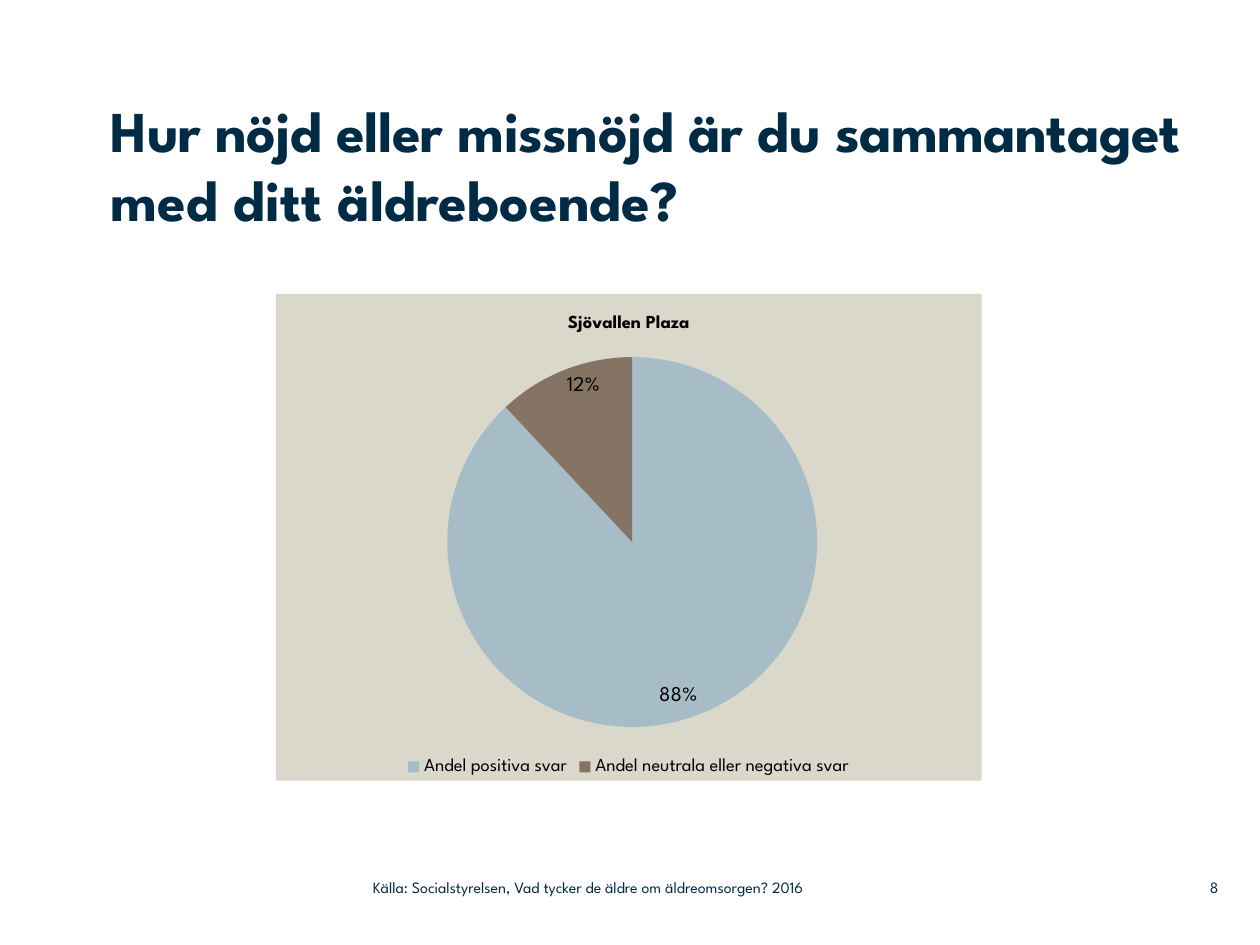
from lxml import etree
from pptx import Presentation
from pptx.chart.data import CategoryChartData
from pptx.dml.color import RGBColor
from pptx.enum.chart import XL_CHART_TYPE, XL_LABEL_POSITION, XL_LEGEND_POSITION
from pptx.enum.text import MSO_ANCHOR, PP_ALIGN
from pptx.oxml import parse_xml
from pptx.oxml.ns import nsdecls
from pptx.util import Inches, Pt

PIE = XL_CHART_TYPE.PIE
INSIDE_END = XL_LABEL_POSITION.INSIDE_END
LEGEND_BOTTOM = XL_LEGEND_POSITION.BOTTOM
TOP, MIDDLE = MSO_ANCHOR.TOP, MSO_ANCHOR.MIDDLE
LEFT, RIGHT = PP_ALIGN.LEFT, PP_ALIGN.RIGHT

WIDTH, HEIGHT = 10, 7.5
FONT = "League Spartan"
NAVY, BLACK, SAND = "002B45", "000000", "DAD7CB"
SLICES = [
    ("Andel positiva svar", 88, "A6BCC6"),
    ("Andel neutrala eller negativa svar", 12, "857363"),
]


def color(value):
    return RGBColor.from_string(value)


def paint(fill, value):
    fill.solid()
    fill.fore_color.rgb = color(value)


def format_font(font, size, value=BLACK, bold=False):
    font.name, font.size, font.bold = FONT, Pt(size), bold
    font.color.rgb = color(value)


def write(paragraph, text, size, value=NAVY, bold=False, align=LEFT, spacing=0):
    """Add a run to the paragraph; spacing is letter spacing in points."""
    paragraph.alignment = align
    run = paragraph.add_run()
    run.text = text
    format_font(run.font, size, value, bold)
    if spacing:
        run.font._element.set("spc", str(round(spacing * 100)))


class SlideBuilder:
    """Places elements by shares of the slide's width and height."""

    def __init__(self, presentation):
        self.slide = presentation.slides.add_slide(presentation.slide_layouts[6])
        paint(self.slide.background.fill, "FFFFFF")

    def box(self, left, top, width, height):
        return (Inches(left * WIDTH), Inches(top * HEIGHT),
                Inches(width * WIDTH), Inches(height * HEIGHT))

    def text(self, place, *runs, anchor=TOP, **style):
        """Add one paragraph made of (text, letter spacing) runs."""
        frame = self.slide.shapes.add_textbox(*self.box(*place)).text_frame
        frame.word_wrap = True
        frame.vertical_anchor = anchor
        frame.margin_left = frame.margin_right = 0
        frame.margin_top = frame.margin_bottom = 0
        for text, spacing in runs:
            write(frame.paragraphs[0], text, spacing=spacing, **style)

    def pie(self, place, title, slices, plot_area):
        data = CategoryChartData(number_format="0")
        data.categories = [name for name, _, _ in slices]
        data.add_series("Series 1", [share for _, share, _ in slices])
        chart = self.slide.shapes.add_chart(PIE, *self.box(*place), data).chart
        format_font(chart.font, 18)

        chart.has_title = True
        write(chart.chart_title.text_frame.paragraphs[0], title, 10.5, BLACK, bold=True)
        chart.chart_title.include_in_layout = False
        chart.has_legend = True
        chart.legend.position = LEGEND_BOTTOM
        chart.legend.include_in_layout = False
        format_font(chart.legend.font, 10.5)

        plot = chart.plots[0]
        plot.vary_by_categories = True
        for index, (_, _, fill) in enumerate(slices):
            paint(plot.series[0].points[index].format.fill, fill)
        plot.has_data_labels = True
        labels = plot.data_labels
        labels.show_percentage, labels.show_value = True, False
        labels.number_format, labels.number_format_is_linked = "0%", False
        labels.position = INSIDE_END
        format_font(labels.font, 12)
        self.fill_chart(chart, SAND)
        self.place_plot(chart, plot_area)

    def fill_chart(self, chart, value):
        chart._chartSpace.chart.addnext(parse_xml(
            f'<c:spPr {nsdecls("c", "a")}><a:solidFill><a:srgbClr val="{value}"/>'
            '</a:solidFill><a:ln><a:noFill/></a:ln></c:spPr>'))

    def place_plot(self, chart, shares):
        """Set the inner plot area as shares of the chart's size."""
        area = chart._chartSpace.chart.plotArea
        for old in area.findall("{*}layout"):
            area.remove(old)
        layout = parse_xml(f'<c:layout {nsdecls("c")}><c:manualLayout/></c:layout>')
        names = ("layoutTarget", "xMode", "yMode", "x", "y", "w", "h")
        for name, value in zip(names, ("inner", "edge", "edge", *shares)):
            tag = etree.QName(layout).namespace
            etree.SubElement(layout[0], f"{{{tag}}}{name}").set("val", str(value))
        area.insert(0, layout)


def main():
    presentation = Presentation()
    presentation.slide_width, presentation.slide_height = Inches(WIDTH), Inches(HEIGHT)
    builder = SlideBuilder(presentation)
    builder.text((0.088, 0.1, 0.883, 0.19),
                 ("Hur nöjd eller missnöjd är du sammantaget ", -0.3),
                 ("med ditt äldreboende?", 0), size=33, bold=True)
    builder.pie((0.219, 0.311, 0.56, 0.515), "Sjövallen Plaza", SLICES,
                (0.24, 0.13, 0.53, 0.76))
    footer_top, footer_height = 0.919, 0.039
    builder.text((0.296, footer_top, 0.443, footer_height),
                 ("Källa: Socialstyrelsen, Vad tycker de äldre om äldreomsorgen? 2016", 0),
                 size=9, anchor=MIDDLE)
    builder.text((0.92, footer_top, 0.047, footer_height), ("8", 0),
                 size=9, anchor=MIDDLE, align=RIGHT)
    presentation.save("out.pptx")


if __name__ == "__main__":
    main()
